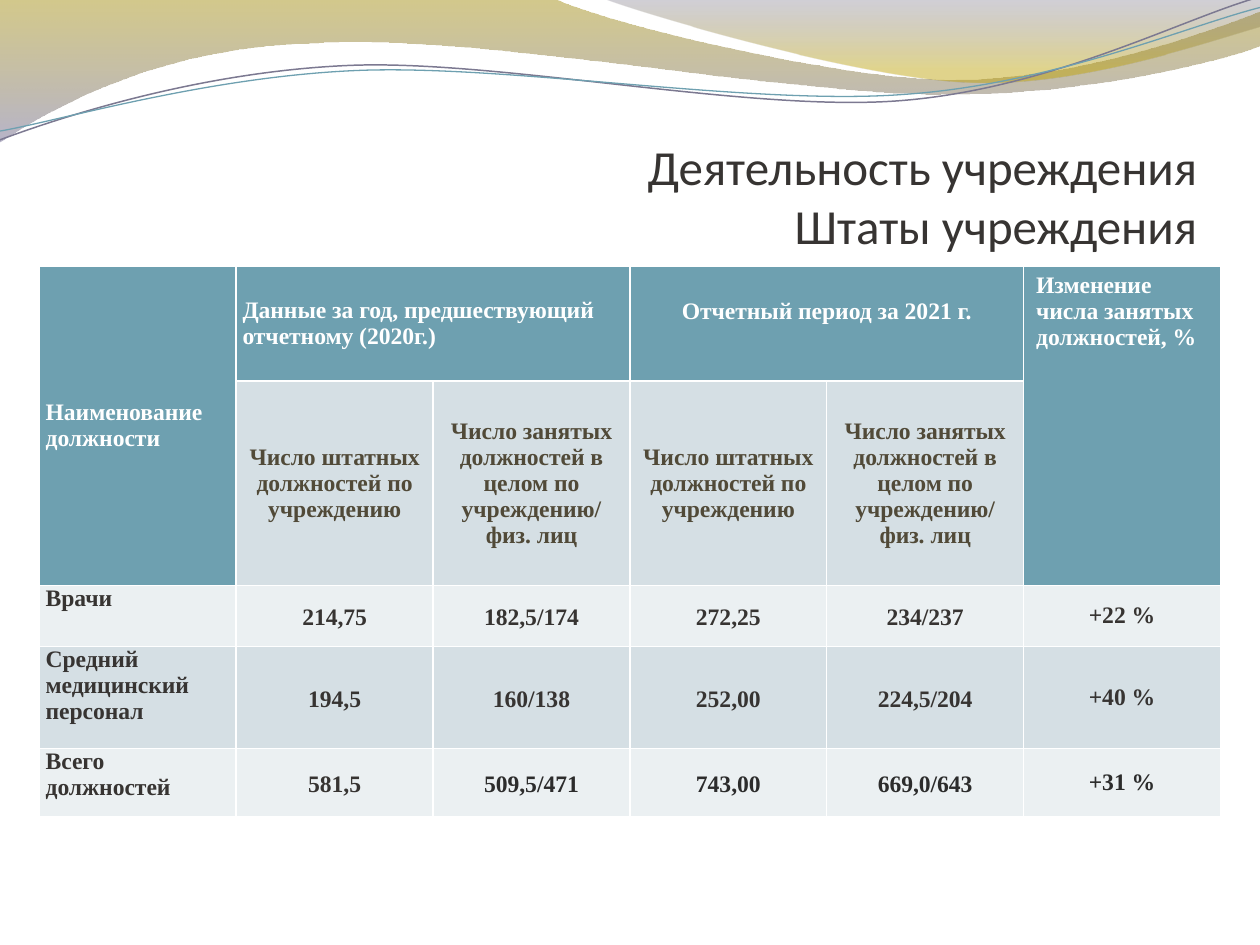
"""Build the staffing slide: waves, a title and a table of posts."""
import dataclasses
import math

import lxml.etree
import pptx
import pptx.dml.color
import pptx.enum.text
import pptx.oxml.ns
import pptx.util

Pt = pptx.util.Pt
qn = pptx.oxml.ns.qn
Align = pptx.enum.text.PP_ALIGN
Anchor = pptx.enum.text.MSO_ANCHOR


@dataclasses.dataclass(frozen=True)
class Theme:
    white: str = "FFFFFF"
    teal: str = "6EA0B0"
    mist: str = "D5DFE4"
    pale: str = "EBF0F2"
    brown: str = "514A38"
    ink: str = "373432"
    dark: str = "2C2C2C"
    mauve: str = "7C7991"
    sans: str = "Calibri"
    serif: str = "Times New Roman"
    head: float = 28
    body: float = 13.5


LOOK = Theme()
TILT = -2.7
BANDS = [
    ([(0, 0), (316.8, -0.7), (342.7, 12.2, 478.1, 45.4, 545.8, 45.4),
      (614.2, 45.4, 689.8, 18.7, 720, 6.5), (720.7, 25.9),
      (707.8, 31.7, 626.4, 54.7, 537.1, 54), (447.8, 54, 275, 20.2, 185, 24.5),
      (92.9, 25.9, 33.1, 59.8, -0.7, 81.4), (0, 0)],
     [(0, "9E8700", 45), (1, "7B769C", 55)]),
    ([(344.9, -0.7), (366.5, 7.9, 491, 44.6, 553.7, 46.8),
      (616.3, 49.7, 691.9, 23, 720, 15.1), (720, 0), (344.9, -0.7)],
     [(0, "66627C", 30), (0.8, "BDA100", 45)]),
]
WAVES = [
    ([(0, 79.9), (34.6, 67, 113.8, 41, 199.4, 37.4),
      (284.4, 33.8, 427, 64.1, 513.4, 57.6),
      (599.8, 51.1, 675.4, 10.8, 718.6, -1.4)], (359.3, 41.4), LOOK.mauve, 0.85),
    ([(0, 74.9), (33.8, 69.1, 118.1, 43.9, 203.8, 40.3),
      (290.2, 36.7, 429.8, 60.5, 516.2, 54),
      (601.9, 48.2, 677.5, 15.1, 720, 4.3)], (359.6, 42.5), LOOK.teal, 0.75),
]
TITLE = ["Деятельность учреждения", "Штаты учреждения"]
ROWS = [65.9, 116.7, 35, 58.4, 38.9]
WIDTH = 112.5
INSET = dict(margin_left=Pt(3.6), margin_right=Pt(3.6),
             margin_top=Pt(0), margin_bottom=Pt(0))
MID = dict(INSET, vertical_anchor=Anchor.MIDDLE)
HEADS = [
    (0, (1, 0), "Наименование должности", Align.LEFT, MID),
    (1, (0, 2), "Данные за год, предшествующий отчетному (2020г.)", Align.LEFT, MID),
    (3, (0, 4), "Отчетный период за 2021 г.", Align.CENTER, dict(margin_top=Pt(18.5))),
    (5, (1, 5), "Изменение числа занятых должностей, %", Align.LEFT, {}),
]
SUBS = ["Число штатных должностей по учреждению",
        "Число занятых должностей в целом по учреждению/ физ. лиц"]
DATA = [
    ["Врачи", "214,75", "182,5/174", "272,25", "234/237", "+22 %"],
    ["Средний медицинский персонал", "194,5", "160/138", "252,00", "224,5/204", "+40 %"],
    ["Всего должностей", "581,5", "509,5/471", "743,00", "669,0/643", "+31 %"],
]


def tint(code):
    """Return the colour of a hex code."""
    return pptx.dml.color.RGBColor.from_string(code)


def put(item, vals):
    """Set each named value on an item."""
    for name, val in vals.items():
        setattr(item, name, val)


def style(font, face, size, code, bold):
    """Format a font."""
    put(font, dict(name=face, size=Pt(size), bold=bold))
    font.color.rgb = tint(code)


def turn(step, hub, angle):
    """Turn the points of a step about a hub."""
    cos, sin = math.cos(math.radians(angle)), math.sin(math.radians(angle))
    dots = []
    for x, y in zip(step[::2], step[1::2]):
        dx, dy = x - hub[0], y - hub[1]
        dots += [hub[0] + dx * cos - dy * sin, hub[1] + dx * sin + dy * cos]
    return dots


def bend(shape, steps):
    """Join each three lines of a curved step into one cubic curve."""
    lines = iter(list(shape.element.iter(qn("a:lnTo"))))
    for step in steps[1:]:
        group = [next(lines) for _ in range(len(step) // 2)]
        if len(group) == 3:
            curve = lxml.etree.Element(qn("a:cubicBezTo"))
            group[0].addprevious(curve)
            for line in group:
                curve.append(line[0])
                line.getparent().remove(line)


def outline(slide, steps, close):
    """Draw a curved outline with no shadow."""
    dots = [(Pt(x), Pt(y)) for step in steps for x, y in zip(step[::2], step[1::2])]
    pen = slide.shapes.build_freeform(*dots[0])
    pen.add_line_segments(dots[1:], close=close)
    shape = pen.convert_to_shape()
    bend(shape, steps)
    shape.shadow.inherit = False
    return shape


def band(slide, steps, stops):
    """Draw a band with a clear gradient running down."""
    shape = outline(slide, steps, True)
    shape.line.fill.background()
    shape.fill.gradient()
    shape.fill.gradient_angle = 270
    for stop, (place, code, _) in zip(shape.fill.gradient_stops, stops):
        stop.position = place
        stop.color.rgb = tint(code)
    for node, stop in zip(shape.element.iter(qn("a:srgbClr")), stops):
        lxml.etree.SubElement(node, qn("a:alpha"), val=str(stop[2] * 1000))


def wave(slide, steps, hub, code, width):
    """Draw a thin open curve, tilted a little."""
    shape = outline(slide, [turn(step, hub, -TILT) for step in steps], False)
    shape.rotation = TILT
    shape.fill.background()
    shape.line.width = Pt(width)
    shape.line.color.rgb = tint(code)


def title(slide):
    """Fill and place the title."""
    shape = slide.shapes.title
    put(shape, dict(left=Pt(36), top=Pt(55.5), width=Pt(648), height=Pt(90)))
    frame = shape.text_frame
    put(frame, dict(margin_left=0, margin_right=0, margin_top=Pt(3.6),
                    margin_bottom=0, vertical_anchor=Anchor.BOTTOM, word_wrap=True,
                    auto_size=pptx.enum.text.MSO_AUTO_SIZE.NONE))
    para = frame.paragraphs[0]
    para.alignment = Align.RIGHT
    for index, words in enumerate(TITLE):
        if index:
            para.add_line_break()
        run = para.add_run()
        run.text = words
        style(run.font, LOOK.sans, LOOK.head, LOOK.ink, False)


def border(cell):
    """Give a cell thin white borders."""
    props = cell._tc.get_or_add_tcPr()
    for side in ("a:lnL", "a:lnR", "a:lnT", "a:lnB"):
        line = lxml.etree.SubElement(props, qn(side), w=str(Pt(1)))
        fill = lxml.etree.SubElement(line, qn("a:solidFill"))
        lxml.etree.SubElement(fill, qn("a:srgbClr"), val=LOOK.white)


def write(cell, text, fill, code, align, vals, space=None):
    """Fill a cell with formatted text."""
    put(cell, vals)
    cell.fill.solid()
    cell.fill.fore_color.rgb = tint(fill)
    para = cell.text_frame.paragraphs[0]
    put(para, dict(alignment=align, line_spacing=space))
    run = para.add_run()
    run.text = text
    style(run.font, LOOK.serif, LOOK.body, code, True)


def table(slide):
    """Build the table of posts."""
    grid = slide.shapes.add_table(len(ROWS), 6, Pt(22.5), Pt(151.9),
                                  Pt(6 * WIDTH), Pt(sum(ROWS))).table
    for col in grid.columns:
        col.width = Pt(WIDTH)
    for row, height in zip(grid.rows, ROWS):
        row.height = Pt(height)
    for cell in grid.iter_cells():
        border(cell)
    for col, end, text, align, vals in HEADS:
        cell = grid.cell(0, col)
        cell.merge(grid.cell(*end))
        write(cell, text, LOOK.teal, LOOK.white, align, vals)
    for col, text in enumerate(SUBS * 2, 1):
        write(grid.cell(1, col), text, LOOK.mist, LOOK.brown, Align.CENTER, MID)
    for row, items in enumerate(DATA, 2):
        fill = LOOK.mist if row % 2 else LOOK.pale
        for col, text in enumerate(items):
            code = LOOK.dark if row == 4 and col > 1 else LOOK.ink
            align, vals = (Align.CENTER, MID) if col else (Align.LEFT, INSET)
            space = 1.15 if 0 < col < 5 else None
            write(grid.cell(row, col), text, fill, code, align, vals, space)


def main():
    """Build and save the slide."""
    deck = pptx.Presentation()
    put(deck, dict(slide_width=Pt(720), slide_height=Pt(540)))
    slide = deck.slides.add_slide(deck.slide_layouts[5])
    for item in BANDS:
        band(slide, *item)
    for item in WAVES:
        wave(slide, *item)
    title(slide)
    table(slide)
    deck.save("out.pptx")


if __name__ == "__main__":
    main()
